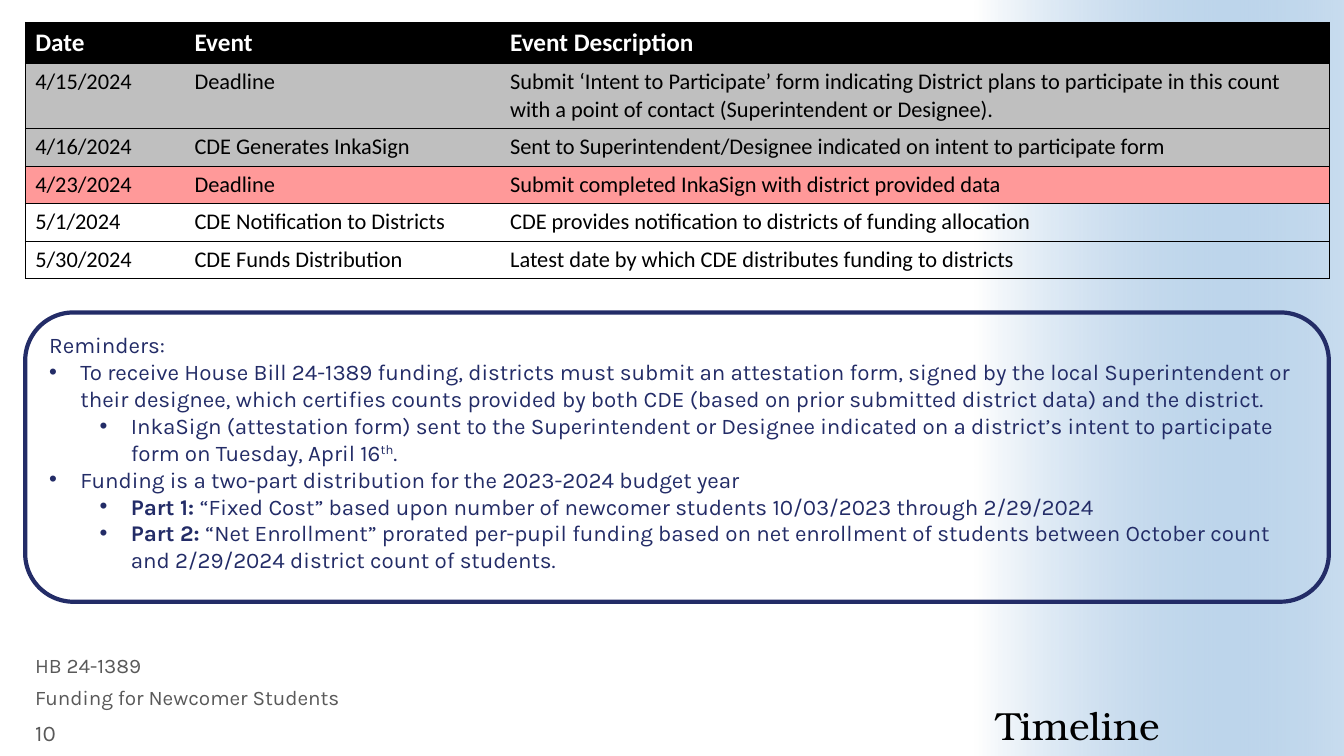
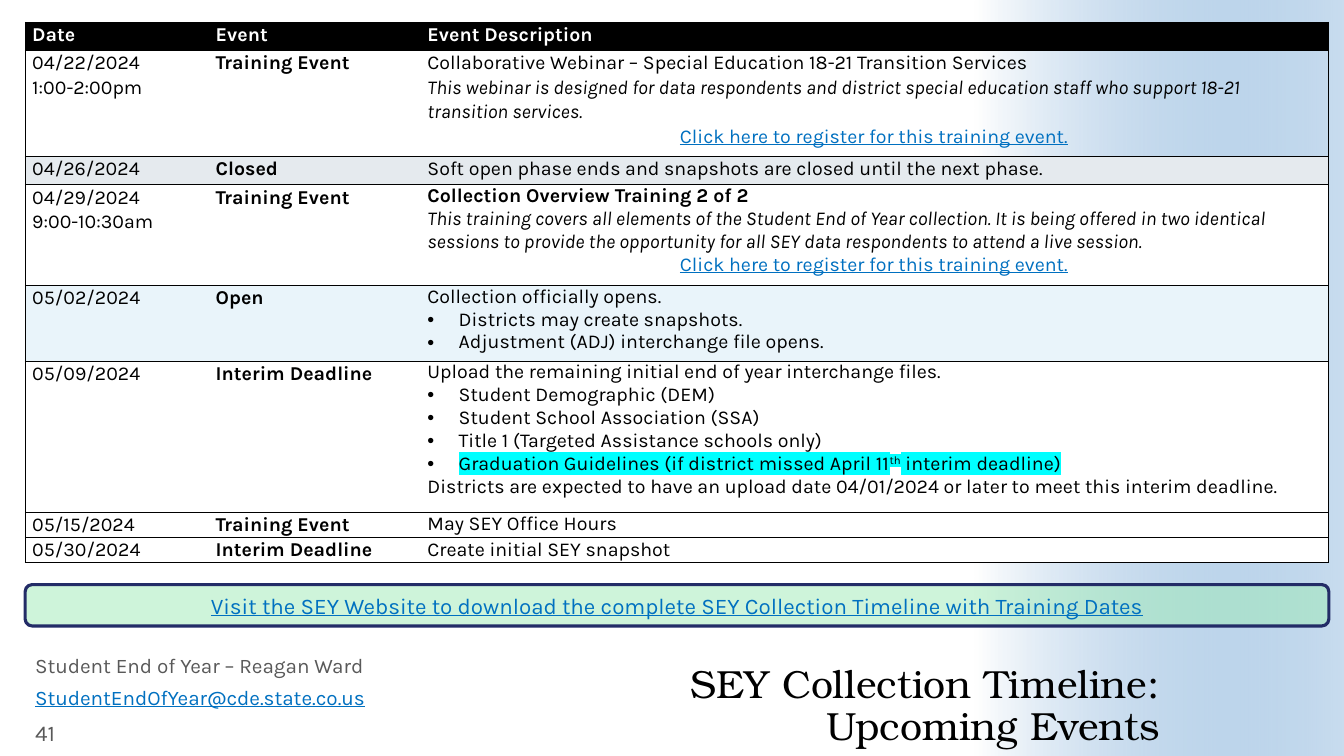
from dataclasses import dataclass
from typing import Optional

from pptx import Presentation
from pptx.dml.color import RGBColor
from pptx.enum.shapes import MSO_SHAPE
from pptx.enum.text import MSO_ANCHOR, MSO_AUTO_SIZE, PP_ALIGN
from pptx.oxml.ns import qn
from pptx.util import Inches, Pt
from lxml import etree

RECTANGLE, ROUNDED = MSO_SHAPE.RECTANGLE, MSO_SHAPE.ROUNDED_RECTANGLE
TOP, MIDDLE, BOTTOM = MSO_ANCHOR.TOP, MSO_ANCHOR.MIDDLE, MSO_ANCHOR.BOTTOM
CENTER, RIGHT = PP_ALIGN.CENTER, PP_ALIGN.RIGHT
NO_AUTOFIT = MSO_AUTO_SIZE.NONE

SLIDE_WIDTH, SLIDE_HEIGHT = 13.33, 7.5
LEFT, CONTENT_WIDTH, TABLE_TOP = 0.25, 12.93, 0.22
FOOTER_TOP, FOOTER_STEP = 6.47, 0.32
HANGING = 0.31
BLACK, WHITE, GRAY, NAVY = "000000", "FFFFFF", "595959", "232C67"
BLUE, LINK, CYAN = "488BC9", "0070C0", "00FFFF"
SILVER, ROSE, MIST, SKY, MINT = "BFBFBF", "FF9999", "E5EAEE", "E9F4FA", "9EEAB6"
PLAIN_TABLE = "{2D5ABB26-0587-4C30-8999-92F81FD0307C}"


@dataclass
class TextStyle:
    """Font settings that a block of text shares."""
    font: str
    size: float
    color: str
    bold: bool = False
    spacing: Optional[float] = None


@dataclass
class Text:
    """A paragraph: runs are strings or (text, marks) with marks b, i, u, s, h."""
    runs: list
    level: Optional[int] = None
    align: Optional[int] = None
    spacing: Optional[float] = None


TITLE = TextStyle("TeX Gyre Bonum", 28, BLACK, spacing=0.9)
FOOTER = TextStyle("Karla", 14.8, GRAY, spacing=0.8)
NUMBER = TextStyle("Karla", 16, GRAY)
REMINDER = TextStyle("Karla", 16, NAVY)


def rgb(color):
    """Turn a hex string into a colour."""
    return RGBColor.from_string(color)


def inches(*lengths):
    """Turn numbers into lengths in inches."""
    return [Inches(length) for length in lengths]


def set_opacity(shape, index, share):
    """Make one of the shape's colours partly transparent."""
    color = list(shape.element.iter(qn("a:srgbClr")))[index]
    etree.SubElement(color, qn("a:alpha")).set("val", str(int(share * 100000)))


def add_run(paragraph, text, marks, style):
    """Add one formatted run."""
    run = paragraph.add_run()
    run.text = text
    font = run.font
    font.name, font.size = style.font, Pt(style.size)
    font.bold = style.bold or "b" in marks
    font.italic = "i" in marks
    font.underline = "u" in marks
    font.color.rgb = rgb(LINK if "u" in marks else style.color)
    properties = run._r.get_or_add_rPr()
    if "s" in marks:
        properties.set("baseline", "30000")
    if "h" in marks:
        highlight = etree.Element(qn("a:highlight"))
        etree.SubElement(highlight, qn("a:srgbClr")).set("val", CYAN)
        properties.find(qn("a:solidFill")).addnext(highlight)


def add_bullet(paragraph, level):
    """Give a paragraph a bullet with a hanging indent."""
    properties = paragraph._p.get_or_add_pPr()
    properties.set("marL", str(Inches(HANGING + level * 0.5)))
    properties.set("indent", str(-Inches(HANGING)))
    etree.SubElement(properties, qn("a:buFont")).set("typeface", "Arial")
    etree.SubElement(properties, qn("a:buChar")).set("char", "•")
    paragraph.level = level


def write(frame, texts, style):
    """Fill a text frame with paragraphs, run by run."""
    frame.word_wrap = True
    for index, text in enumerate(texts):
        text = Text([text]) if isinstance(text, str) else text
        paragraph = frame.paragraphs[0] if index == 0 else frame.add_paragraph()
        if text.level is not None:
            add_bullet(paragraph, text.level)
        if text.align is not None:
            paragraph.alignment = text.align
        spacing = text.spacing or style.spacing
        if spacing:
            paragraph.line_spacing = spacing
        for run in text.runs:
            content, marks = (run, "") if isinstance(run, str) else run
            for position, line in enumerate(content.split("\n")):
                if position:
                    paragraph.add_line_break()
                if line:
                    add_run(paragraph, line, marks, style)


def add_layout_band(slide):
    """Place the gradient band at the right of the slide's layout."""
    width = 3.66
    left = SLIDE_WIDTH - (width + SLIDE_HEIGHT) / 2
    top = (SLIDE_HEIGHT - width) / 2
    band = slide.shapes.add_shape(RECTANGLE, *inches(left, top, SLIDE_HEIGHT, width))
    band.rotation = 270
    band.shadow.inherit = False
    band.line.fill.background()
    band.fill.gradient()
    band.fill.gradient_angle = 270
    for stop, color, position in zip(band.fill.gradient_stops, (WHITE, BLUE), (0, 1)):
        stop.color.rgb = rgb(color)
        stop.position = position
    set_opacity(band, 1, 0.3)
    slide.slide_layout.shapes.element.insert(2, band.element)


def add_title(slide, text):
    """Place the title at the bottom right."""
    title = slide.shapes.title
    title.left, title.top, title.width, title.height = inches(4.26, 6.45, 7.24, 0.98)
    frame = title.text_frame
    frame.auto_size = NO_AUTOFIT
    frame.vertical_anchor = BOTTOM
    frame.margin_left = frame.margin_right = frame.margin_top = frame.margin_bottom = 0
    write(frame, [Text([text], align=RIGHT)], TITLE)


def add_footer(slide, lines, number):
    """Stack the footer lines and the slide number at the bottom left."""
    entries = [(line, FOOTER, 3.89, TOP) for line in lines] + [(number, NUMBER, 0.85, MIDDLE)]
    for index, (text, style, width, anchor) in enumerate(entries):
        top = FOOTER_TOP + index * FOOTER_STEP
        box = slide.shapes.add_textbox(*inches(LEFT, top, width, 0.31))
        box.text_frame.vertical_anchor = anchor
        write(box.text_frame, [text], style)


def add_panel(slide, top, height, texts, style, line_width, anchor=TOP, fill=None):
    """Place an outlined rounded panel across the content width."""
    panel = slide.shapes.add_shape(ROUNDED, *inches(LEFT, top, CONTENT_WIDTH, height))
    panel.shadow.inherit = False
    if fill:
        panel.fill.solid()
        panel.fill.fore_color.rgb = rgb(fill)
        set_opacity(panel, 0, 0.5)
    else:
        panel.fill.background()
    panel.line.color.rgb = rgb(NAVY)
    panel.line.width = Pt(line_width)
    panel.text_frame.vertical_anchor = anchor
    for text in texts:
        if isinstance(text, Text) and text.align is None:
            text.align = PP_ALIGN.LEFT
    write(panel.text_frame, texts, style)


def set_borders(cell, sides):
    """Draw thin black borders on the named sides of a cell."""
    properties = cell._tc.get_or_add_tcPr()
    for index, side in enumerate(sides):
        line = etree.Element(qn(f"a:ln{side}"), w=str(Pt(0.5)))
        fill = etree.SubElement(line, qn("a:solidFill"))
        etree.SubElement(fill, qn("a:srgbClr")).set("val", BLACK)
        properties.insert(index, line)


def add_timeline(slide, columns, rows, body, header, margins, bold_event=False):
    """Place a timeline table; each row is (height, fill, cells)."""
    rows = [(rows[0][0], BLACK, ["Date", "Event", "Event Description"])] + rows[1:]
    height = sum(row[0] for row in rows)
    frame = slide.shapes.add_table(
        len(rows), len(columns), *inches(LEFT, TABLE_TOP, CONTENT_WIDTH, height))
    next(frame.element.iter(qn("a:tableStyleId"))).text = PLAIN_TABLE
    table = frame.table
    for column, width in zip(table.columns, columns):
        column.width = Inches(width)
    event = TextStyle(body.font, body.size, body.color, bold_event, body.spacing)
    last = len(columns) - 1
    for row_index, (row_height, fill, contents) in enumerate(rows):
        table.rows[row_index].height = Inches(row_height)
        for index, content in enumerate(contents):
            cell = table.cell(row_index, index)
            cell.margin_left = cell.margin_right = Inches(margins[0])
            cell.margin_top = cell.margin_bottom = Inches(margins[1])
            if fill:
                cell.fill.solid()
                cell.fill.fore_color.rgb = rgb(fill)
            else:
                cell.fill.background()
            set_borders(cell, "L" * (index == 0) + "R" * (index == last) + "TB")
            style = header if row_index == 0 else event if index == 1 else body
            write(cell.text_frame, [content] if isinstance(content, str) else content, style)


def build_funding_slide(slide):
    """Fill the funding timeline slide."""
    add_title(slide, "Timeline")
    rows = [
        (0.41, BLACK, []),
        (0.64, SILVER, ["4/15/2024", "Deadline", "Submit ‘Intent to Participate’ form indicating District plans to participate in this count with a point of contact (Superintendent or Designee)."]),
        (0.37, SILVER, ["4/16/2024", "CDE Generates InkaSign", "Sent to Superintendent/Designee indicated on intent to participate form"]),
        (0.37, ROSE, ["4/23/2024", "Deadline", "Submit completed InkaSign with district provided data"]),
        (0.37, None, ["5/1/2024", "CDE Notification to Districts", "CDE provides notification to districts of funding allocation"]),
        (0.37, None, ["5/30/2024", "CDE Funds Distribution", "Latest date by which CDE distributes funding to districts"]),
    ]
    add_timeline(slide, (1.58, 3.13, 8.22), rows, TextStyle("Calibri", 16, BLACK),
                 TextStyle("Calibri", 18, WHITE, True), (0.1, 0.05))
    reminders = [
        Text(["Reminders:"]),
        Text(["To receive House Bill 24-1389 funding, districts must submit an attestation form, signed by the local Superintendent or their designee, which certifies counts provided by both CDE (based on prior submitted district data) and the district."], 0),
        Text(["InkaSign (attestation form) sent to the Superintendent or Designee indicated on a district’s intent to participate form on Tuesday, April 16", ("th", "s"), "."], 1),
        Text(["Funding is a two-part distribution for the 2023-2024 budget year"], 0),
        Text([("Part 1: ", "b"), "“Fixed Cost” based upon number of newcomer students 10/03/2023 through 2/29/2024"], 1),
        Text([("Part 2: ", "b"), "“Net Enrollment” prorated per-pupil funding based on net enrollment of students between October count and 2/29/2024 district count of students."], 1),
    ]
    add_panel(slide, 3.1, 2.87, reminders, REMINDER, 3)
    add_footer(slide, ["HB 24-1389", "Funding for Newcomer Students"], "10")


def build_collection_slide(slide):
    """Fill the collection timeline slide."""
    add_title(slide, "SEY Collection Timeline:\nUpcoming Events")
    register = ("Click here to register for this training event.", "u")
    overview = Text(["".join(["Collection Overview Training 2 of 2", "\n"]), ("This training covers all elements of the Student End of Year collection. It is being offered in two identical sessions to provide the opportunity for all SEY data respondents to attend a live session.", "i")], spacing=1.0)
    overview.runs[0] = (overview.runs[0], "b")
    opening = [Text(["Collection officially opens."], spacing=1.0)]
    opening += [Text([item], 0, spacing=1.0) for item in (
        "Districts may create snapshots.", "Adjustment (ADJ) interchange file opens.")]
    uploads = [Text(["Upload the remaining initial end of year interchange files."], spacing=1.0)]
    uploads += [Text(runs, 0, spacing=1.0) for runs in (
        ["Student Demographic (DEM)"],
        ["Student School Association (SSA)"],
        ["Title 1 (Targeted Assistance schools only)"],
        [("Graduation Guidelines (if district missed April 11", "h"), ("th", "hs"), (" interim deadline)", "h")])]
    uploads.append(Text(["Districts are expected to have an upload date 04/01/2024 or later to meet this interim deadline."], spacing=1.0))
    rows = [
        (0.28, BLACK, []),
        (1.05, None, [["04/22/2024", "1:00-2:00pm"], "Training Event", [
            "Collaborative Webinar – Special Education 18-21 Transition Services",
            Text([("This webinar is designed for data respondents and district special education staff who support 18-21 transition services.", "i")]),
            Text([register], align=CENTER)]]),
        (0.28, MIST, ["04/26/2024", "Closed", "Soft open phase ends and snapshots are closed until the next phase."]),
        (1, WHITE, [["04/29/2024", "9:00-10:30am"], "Training Event",
                    [overview, Text([register], align=CENTER, spacing=1.0)]]),
        (0.75, SKY, ["05/02/2024", "Open", opening]),
        (1.5, WHITE, ["05/09/2024", "Interim Deadline", uploads]),
        (0.25, WHITE, ["05/15/2024", "Training Event", [Text(["May SEY Office Hours"], spacing=1.0)]]),
        (0.25, WHITE, ["05/30/2024", "Interim Deadline", "Create initial SEY snapshot"]),
    ]
    add_timeline(slide, (1.82, 2.1, 9), rows, TextStyle("Karla", 14, BLACK, spacing=1.07),
                 TextStyle("Karla", 14, WHITE, True, 1.07), (0.07, 0), bold_event=True)
    website = Text([("Visit the SEY Website to download the complete SEY Collection Timeline with Training Dates", "u")], align=CENTER)
    add_panel(slide, 5.8, 0.41, [website], REMINDER, 2.25, MIDDLE, MINT)
    add_footer(slide, ["Student End of Year – Reagan Ward",
                       Text([("StudentEndOfYear@cde.state.co.us", "u")])], "41")


def main():
    """Build and save the presentation."""
    presentation = Presentation()
    presentation.slide_width, presentation.slide_height = inches(SLIDE_WIDTH, SLIDE_HEIGHT)
    layout = presentation.slide_layouts[5]
    slides = [presentation.slides.add_slide(layout) for _ in range(2)]
    add_layout_band(slides[0])
    build_funding_slide(slides[0])
    build_collection_slide(slides[1])
    presentation.save("out.pptx")


if __name__ == "__main__":
    main()
